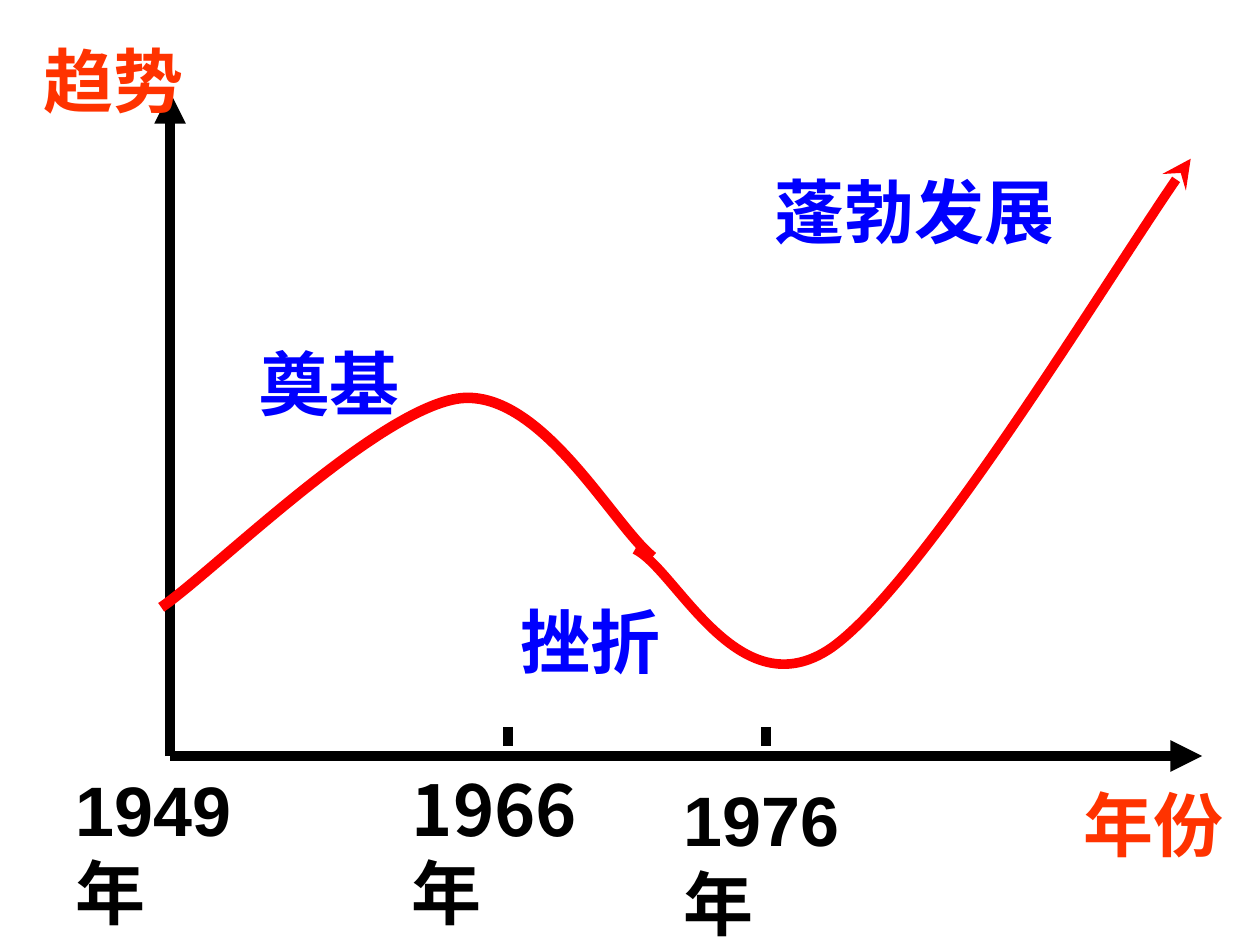
from dataclasses import dataclass

from lxml import etree
from pptx import Presentation
from pptx.dml.color import RGBColor
from pptx.enum.shapes import MSO_CONNECTOR
from pptx.enum.text import MSO_ANCHOR, PP_ALIGN
from pptx.oxml.ns import qn
from pptx.util import Inches, Pt

STRAIGHT = MSO_CONNECTOR.STRAIGHT
TOP = MSO_ANCHOR.TOP
LEFT = PP_ALIGN.LEFT

COLORS = {"axis": "000000", "curve": "FF0000", "title": "FF3300", "stage": "0000FF"}
LATIN = "Arial"
CHINESE = "Noto Sans CJK SC"
ORIGIN = (1.35, 6)
Point = tuple[float, float]


@dataclass(frozen=True)
class Label:
    text: str
    left: float
    top: float
    width: float
    color: str
    font: str = LATIN
    wrap: bool = False


@dataclass(frozen=True)
class Line:
    start: Point
    end: Point
    arrow: str = ""


@dataclass(frozen=True)
class Curve:
    points: list[Point]
    weight: float
    head: str = ""


LINES = [
    Line(ORIGIN, (1.35, 0.73), "triangle"),
    Line(ORIGIN, (9.54, 6), "triangle"),
    *[Line((tick, 5.77), (tick, 5.92)) for tick in (4.03, 6.08)],
]

LABELS = [
    Label("1966年", 3.17, 6, 1.8, "axis", CHINESE, True),
    Label("1976年", 5.33, 6.08, 1.9, "axis", wrap=True),
    Label("1949年", 0.5, 6, 1.9, "axis", wrap=True),
    Label("趋势", 0.25, 0.22, 1.32, "title"),
    Label("年份", 8.5, 6.12, 1.32, "title"),
    Label("奠基", 1.96, 2.62, 1.32, "stage"),
    Label("挫折", 4.03, 4.67, 1.32, "stage"),
    Label("蓬勃发展", 6.05, 1.26, 2.43, "stage", CHINESE),
]

CURVES = [
    Curve([(1.28, 4.82), (1.68, 4.55), (3.01, 3.23), (3.66, 3.16),
           (4.3, 3.1), (4.86, 4.16), (5.18, 4.42)], 6),
    Curve([(9.45, 1.26), (8.98, 1.9), (7.33, 4.62), (6.6, 5.14),
           (5.86, 5.65), (5.37, 4.52), (5.04, 4.36)], 5.5, "stealth"),
]


def style_line(shape, color: str, weight: float, end_tag: str, arrow: str) -> None:
    shape.line.color.rgb = RGBColor.from_string(COLORS[color])
    shape.line.width = Pt(weight)
    if arrow:
        outline = shape.line._get_or_add_ln()
        etree.SubElement(outline, qn(end_tag), type=arrow)


def draw_line(page, line: Line) -> None:
    ends = [Inches(value) for value in (*line.start, *line.end)]
    connector = page.shapes.add_connector(STRAIGHT, *ends)
    style_line(connector, "axis", 6, "a:tailEnd", line.arrow)
    etree.SubElement(connector._element.spPr, qn("a:effectLst"))


def draw_curve(page, curve: Curve) -> None:
    start, *rest = [(Inches(x), Inches(y)) for x, y in curve.points]
    builder = page.shapes.build_freeform(*start)
    builder.add_line_segments(rest, close=False)
    shape = builder.convert_to_shape()
    shape.shadow.inherit = False
    shape.fill.background()
    segments = shape._element.xpath(".//a:lnTo")
    for index in range(0, len(segments), 3):
        bezier = etree.Element(qn("a:cubicBezTo"))
        segments[index].addprevious(bezier)
        for segment in segments[index:index + 3]:
            bezier.append(segment[0])
            segment.getparent().remove(segment)
    style_line(shape, "curve", curve.weight, "a:headEnd", curve.head)


def write_text(frame, text: str, *, font: str, color: str, size: float = 40) -> None:
    para = frame.paragraphs[0]
    para.alignment = LEFT
    para.line_spacing = Pt(48)
    span = para.add_run()
    span.text = text
    span.font.name = font
    span.font.size = Pt(size)
    span.font.bold = True
    span.font.color.rgb = RGBColor.from_string(COLORS[color])
    etree.SubElement(span._r.get_or_add_rPr(), qn("a:ea"), typeface=CHINESE)


def draw_label(page, label: Label) -> None:
    box = page.shapes.add_textbox(
        Inches(label.left), Inches(label.top), Inches(label.width), Inches(0.77))
    frame = box.text_frame
    frame.word_wrap = label.wrap
    frame.vertical_anchor = TOP
    frame.margin_top = Inches(0.08)
    write_text(frame, label.text, font=label.font, color=label.color)


def main() -> None:
    deck = Presentation()
    deck.slide_width, deck.slide_height = Inches(10), Inches(7.5)
    page = deck.slides.add_slide(deck.slide_layouts[6])
    for line in LINES:
        draw_line(page, line)
    for label in LABELS:
        draw_label(page, label)
    for curve in CURVES:
        draw_curve(page, curve)
    deck.save("out.pptx")


if __name__ == "__main__":
    main()
